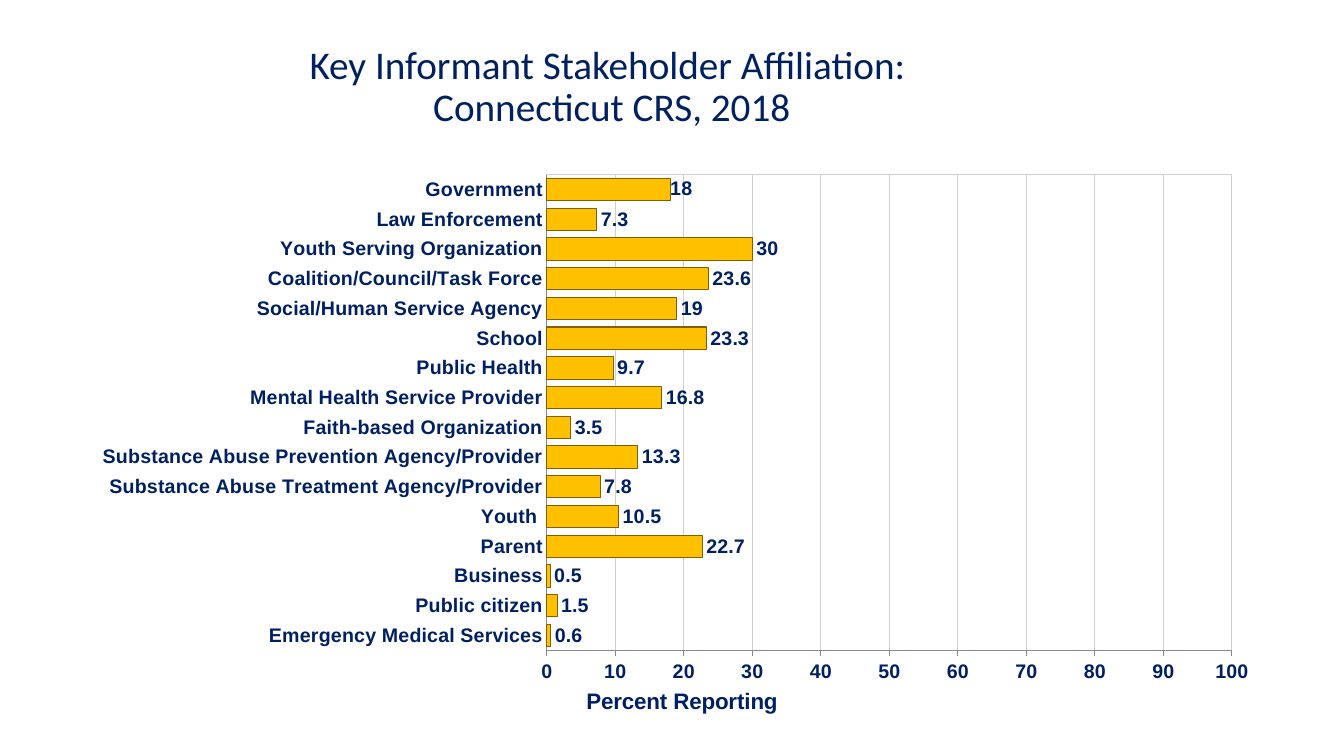
from dataclasses import dataclass

from lxml import etree
from pptx import Presentation
from pptx.chart import data as chart_data
from pptx.dml.color import RGBColor
from pptx.enum import chart as charts, text
from pptx.oxml import ns
from pptx.util import Pt

# Content, in reading order
HEADING = ["Key Informant Stakeholder Affiliation: ", "Connecticut CRS, 2018"]
AXIS_TITLE = "Percent Reporting"
AFFILIATIONS = [
    ("Government", 18),
    ("Law Enforcement", 7.3),
    ("Youth Serving Organization", 30),
    ("Coalition/Council/Task Force", 23.6),
    ("Social/Human Service Agency", 19),
    ("School", 23.3),
    ("Public Health", 9.7),
    ("Mental Health Service Provider", 16.8),
    ("Faith-based Organization", 3.5),
    ("Substance Abuse Prevention Agency/Provider", 13.3),
    ("Substance Abuse Treatment Agency/Provider", 7.8),
    ("Youth ", 10.5),
    ("Parent", 22.7),
    ("Business", 0.5),
    ("Public citizen", 1.5),
    ("Emergency Medical Services", 0.6),
]


@dataclass(frozen=True)
class Theme:
    navy: RGBColor = RGBColor.from_string("002060")
    bar: RGBColor = RGBColor.from_string("FFC000")
    bar_edge: RGBColor = RGBColor.from_string("806000")
    grid: RGBColor = RGBColor.from_string("D0CECE")
    axis: RGBColor = RGBColor.from_string("898989")
    heading_font: str = "Calibri"
    chart_font: str = "Arial"
    heading_size: int = 28
    axis_title_size: int = 16
    label_size: int = 14
    hairline: float = 0.75


THEME = Theme()


def style_font(font, name, size, bold):
    font.name, font.size, font.bold = name, Pt(size), bold
    font.color.rgb = THEME.navy


def style_line(line, color):
    line.color.rgb = color
    line.width = Pt(THEME.hairline)


def place(parent, index, **settings):
    """Give a chart part a manual layout, as fractions of the chart."""
    for old in parent.findall(ns.qn("c:layout")):
        parent.remove(old)
    layout = etree.Element(ns.qn("c:layout"))
    manual = etree.SubElement(layout, ns.qn("c:manualLayout"))
    for tag, value in settings.items():
        etree.SubElement(manual, ns.qn("c:" + tag)).set("val", str(value))
    parent.insert(index, layout)


prs = Presentation()
prs.slide_width, prs.slide_height = Pt(960), Pt(540)
slide = prs.slides.add_slide(prs.slide_layouts[6])

# Heading
heading = slide.shapes.add_textbox(Pt(66), Pt(29), Pt(742), Pt(104)).text_frame
heading.word_wrap = True
heading.vertical_anchor = text.MSO_ANCHOR.TOP
heading_lines = heading.paragraphs[0]
heading_lines.alignment = text.PP_ALIGN.CENTER
heading_lines.line_spacing = 0.9
for number, line in enumerate(HEADING):
    if number:
        heading_lines.add_line_break()
    run = heading_lines.add_run()
    run.text = line
    style_font(run.font, THEME.heading_font, THEME.heading_size, False)

# Chart: a bar chart counts its categories from the bottom up
affiliation_data = chart_data.CategoryChartData(number_format="General")
bottom_up = AFFILIATIONS[::-1]
affiliation_data.categories = [name for name, _ in bottom_up]
affiliation_data.add_series("Series 1", [value for _, value in bottom_up])
chart = slide.shapes.add_chart(
    charts.XL_CHART_TYPE.BAR_CLUSTERED,
    Pt(16.5), Pt(89.3), Pt(908), Pt(428.4), affiliation_data).chart
chart.has_title = chart.has_legend = False
style_font(chart.font, THEME.chart_font, THEME.label_size, True)

# Bars and their values
plot = chart.plots[0]
plot.gap_width, plot.overlap = 33, 1
plot.vary_by_categories = False
bars = plot.series[0]
bars.format.fill.solid()
bars.format.fill.fore_color.rgb = THEME.bar
style_line(bars.format.line, THEME.bar_edge)
values = bars.data_labels
values.show_value = True
values.position = charts.XL_LABEL_POSITION.OUTSIDE_END
style_font(values.font, THEME.chart_font, THEME.label_size, True)

# The top value sits close against its bar
top_index = len(bottom_up) - 1
top_value = bars.points[top_index].data_label
style_font(top_value.font, THEME.chart_font, THEME.label_size, True)
top_value.position = charts.XL_LABEL_POSITION.OUTSIDE_END
for label in chart.element.iter(ns.qn("c:dLbl")):
    place(label, 1, x=-0.003, y=-0.002)

# Axes
affiliations, percent = chart.category_axis, chart.value_axis
for axis in (affiliations, percent):
    style_font(axis.tick_labels.font, THEME.chart_font, THEME.label_size, True)
    style_line(axis.format.line, THEME.axis)
    axis.minor_tick_mark = charts.XL_TICK_MARK.NONE
affiliations.major_tick_mark = charts.XL_TICK_MARK.NONE
affiliations.has_major_gridlines = False
percent.major_tick_mark = charts.XL_TICK_MARK.OUTSIDE
percent.minimum_scale, percent.maximum_scale, percent.major_unit = 0, 100, 10
percent.tick_labels.number_format = "0"
percent.tick_labels.number_format_is_linked = False
percent.has_major_gridlines = True
style_line(percent.major_gridlines.format.line, THEME.grid)

# Axis title
axis_title = percent.axis_title
run = axis_title.text_frame.paragraphs[0].add_run()
run.text = AXIS_TITLE
style_font(run.font, THEME.chart_font, THEME.axis_title_size, True)
area = chart.element.find(".//" + ns.qn("c:plotArea"))
place(area.find(ns.qn("c:valAx")).find(ns.qn("c:title")), 1,
      xMode="edge", yMode="edge", x=0.44, y=0.93)

# Plot area: inner position and thin frame
place(area, 0, layoutTarget="inner", xMode="edge", yMode="edge",
      x=0.412, y=0.083, w=0.539, h=0.793)
frame = etree.SubElement(area, ns.qn("c:spPr"))
etree.SubElement(frame, ns.qn("a:noFill"))
edge = etree.SubElement(frame, ns.qn("a:ln"), w=str(Pt(THEME.hairline)))
edge_fill = etree.SubElement(edge, ns.qn("a:solidFill"))
etree.SubElement(edge_fill, ns.qn("a:srgbClr"), val=str(THEME.grid))

prs.save("out.pptx")
